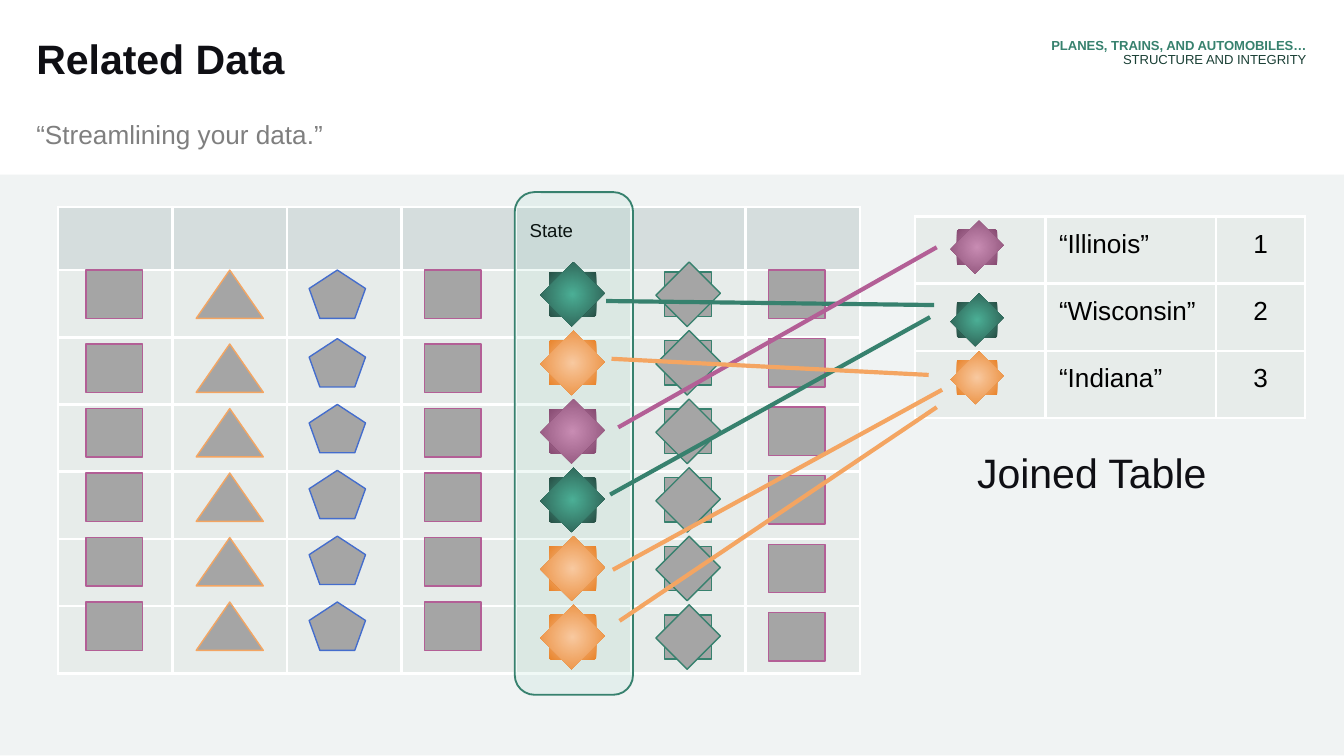
from typing import NamedTuple

from lxml.etree import SubElement
from pptx import Presentation
from pptx.dml.color import RGBColor
from pptx.enum.shapes import MSO_CONNECTOR as Conn, MSO_SHAPE as Kind
from pptx.enum.text import PP_ALIGN as Align
from pptx.oxml import parse_xml
from pptx.oxml.ns import nsdecls, qn
from pptx.util import Inches, Pt

HUES = {
    "panel": "F0F3F3", "ink": "0F0F14", "quote": "7F7F7F", "black": "000000",
    "head": "D5DDDD", "cell": "E7ECEA", "white": "FFFFFF", "gray": "A5A5A5",
    "mint": "73C5AF", "green": "37816E", "deep": "1B4036",
    "plum": "B35F96", "orange": "F4A562", "blue": "446DCD",
}
# Inner and outer colours of the state stars
GLOWS = {
    "green": ("4BAF96", "285046"),
    "orange": ("F8C9A0", "E9852D"),
    "plum": ("C88CB3", "874B72"),
}
FONT = "Arial"


class Label(NamedTuple):
    text: str
    left: float
    top: float
    width: float
    height: float
    size: int
    hue: str
    bold: bool = False
    lead: float = 0.9


class Column(NamedTuple):
    kind: Kind
    left: float
    width: float
    hue: str
    first: float
    second: float
    step: float


class Link(NamedTuple):
    x1: float
    y1: float
    x2: float
    y2: float
    hue: str


LABELS = [
    Label("Related Data", 0.27, 0.29, 7.99, 0.59, 22, "ink", True),
    Label("“Streamlining your data.”", 0.27, 0.88, 7.09, 0.47, 14, "quote", lead=1),
    Label("Joined Table", 7.27, 3.37, 1.84, 0.59, 22, "ink"),
]
COLUMNS = [
    Column(Kind.RECTANGLE, 0.64, 0.42, "plum", 2.01, 2.56, 0.48),
    Column(Kind.ISOSCELES_TRIANGLE, 1.46, 0.5, "orange", 2.01, 2.56, 0.48),
    Column(Kind.REGULAR_PENTAGON, 2.3, 0.42, "blue", 2.01, 2.52, 0.49),
    Column(Kind.RECTANGLE, 3.16, 0.42, "plum", 2.01, 2.56, 0.48),
    Column(Kind.RECTANGLE, 5.72, 0.42, "plum", 2.01, 2.52, 0.51),
]
STATES = ["green", "orange", "plum", "green", "orange", "orange"]
KEYS = [("plum", 1.84), ("green", 2.38), ("orange", 2.81)]
LINKS = [
    Link(4.51, 2.24, 6.95, 2.27, "green"),
    Link(4.54, 3.68, 6.92, 2.36, "green"),
    Link(4.6, 3.18, 6.97, 1.84, "plum"),
    Link(4.55, 2.67, 6.91, 2.79, "orange"),
    Link(4.61, 4.62, 6.97, 3.03, "orange"),
    Link(4.56, 4.24, 7.01, 2.9, "orange"),
]


def color(name: str) -> RGBColor:
    return RGBColor.from_string(HUES[name])


def style(font, size: int, hue: str, bold: bool = False) -> None:
    font.name, font.size, font.bold = FONT, Pt(size), bold
    font.color.rgb = color(hue)


def add_box(shapes, left: float, top: float, width: float, height: float, right: float = 0.1):
    frame = shapes.add_textbox(*map(Inches, (left, top, width, height))).text_frame
    frame.word_wrap = True
    frame.margin_left = frame.margin_top = 0
    frame.margin_right, frame.margin_bottom = Inches(right), Inches(0.1)
    return frame.paragraphs[0]


def add_label(shapes, label: Label) -> None:
    para = add_box(shapes, *label[1:5])
    para.text, para.line_spacing = label.text, label.lead
    style(para.font, label.size, label.hue, label.bold)


def add_mark(shapes, kind: Kind, left: float, top: float, width: float, height: float,
             fill: str, line: str = "", weight: float = 0.75):
    mark = shapes.add_shape(kind, *map(Inches, (left, top, width, height)))
    mark.shadow.inherit = False
    mark.fill.solid()
    mark.fill.fore_color.rgb = color(fill)
    if line:
        mark.line.color.rgb = color(line)
        mark.line.width = Pt(weight)
    else:
        mark.line.fill.background()
    return mark


def add_glow(mark, inner: str, outer: str) -> None:
    solid = mark._element.spPr.find(qn("a:solidFill"))
    solid.getparent().replace(solid, parse_xml(
        f'<a:gradFill {nsdecls("a")} rotWithShape="1"><a:gsLst>'
        f'<a:gs pos="0"><a:srgbClr val="{inner}"/></a:gs>'
        f'<a:gs pos="100000"><a:srgbClr val="{outer}"/></a:gs></a:gsLst>'
        '<a:path path="circle"><a:fillToRect l="50000" t="50000" r="50000" b="50000"/>'
        '</a:path></a:gradFill>'))


def add_star(shapes, x: float, y: float, wide: float, tall: float, glow: str = "") -> None:
    """Two crossed rectangles centred on x, y."""
    group = shapes.add_group_shape()
    for w, h, turn in ((wide, tall, 0), (tall, wide, 45)):
        part = add_mark(group.shapes, Kind.RECTANGLE, x - w / 2, y - h / 2, w, h,
                        "gray", "" if glow else "green")
        part.rotation = turn
        if glow:
            add_glow(part, *GLOWS[glow])


def add_grid(shapes, left: float, top: float, widths: list[float], heights: list[float]):
    grid = shapes.add_table(len(heights), len(widths), *map(
        Inches, (left, top, sum(widths), sum(heights)))).table
    grid.first_row = grid.horz_banding = False
    for col, width in zip(grid.columns, widths):
        col.width = Inches(width)
    for row, height in zip(grid.rows, heights):
        row.height = Inches(height)
    for cell in grid.iter_cells():
        props = cell._tc.get_or_add_tcPr()
        for side in ("lnL", "lnR", "lnT", "lnB"):
            edge = SubElement(props, qn(f"a:{side}"), w=str(Pt(1.5)))
            SubElement(SubElement(edge, qn("a:solidFill")), qn("a:srgbClr"), val=HUES["white"])
        cell.fill.solid()
        cell.fill.fore_color.rgb = color("cell")
    return grid


def set_cell(cell, text: str, size: int, align: Align = Align.LEFT) -> None:
    cell.margin_left = cell.margin_right = cell.margin_top = cell.margin_bottom = Inches(0.1)
    para = cell.text_frame.paragraphs[0]
    para.text, para.alignment = text, align
    style(para.font, size, "black")


def add_link(shapes, link: Link) -> None:
    line = shapes.add_connector(Conn.STRAIGHT, *map(Inches, link[:4]))
    line.line.color.rgb = color(link.hue)
    line.line.width = Pt(2.25)
    SubElement(line._element.spPr, qn("a:effectLst"))


def main() -> None:
    # A 16:9 slide
    deck = Presentation()
    deck.slide_width = Inches(10)
    deck.slide_height = Inches(10 * 9 / 16)
    shapes = deck.slides.add_slide(deck.slide_layouts[6]).shapes

    # Panel and headings
    add_mark(shapes, Kind.RECTANGLE, 0, 1.3, 10, 4.32, "panel")
    for label in LABELS:
        add_label(shapes, label)
    para = add_box(shapes, 6.65, 0.29, 3.07, 0.36, right=0)
    para.alignment, para.line_spacing = Align.RIGHT, 0.9
    run = para.add_run()
    run.text = "PLANES, TRAINS, AND AUTOMOBILES…"
    style(run.font, 7, "green", True)
    para.add_line_break()
    run = para.add_run()
    run.text = "STRUCTURE AND INTEGRITY"
    style(run.font, 7, "deep")

    # Main table with its state column lit up
    main_grid = add_grid(shapes, 0.43, 1.54, [5.97 / 7] * 7, [0.47] + [0.5] * 6)
    for cell in main_grid.rows[0].cells:
        cell.fill.fore_color.rgb = color("head")
    set_cell(main_grid.cell(0, 4), "State", 10)
    frame = add_mark(shapes, Kind.ROUNDED_RECTANGLE, 2.4, 2.86, 3.74, 0.88, "mint", "green", 1)
    frame.rotation = 90
    tint = frame._element.spPr.find(qn("a:solidFill"))[0]
    SubElement(tint, qn("a:alpha"), val="10000")

    # Marks in the main table
    for col in COLUMNS:
        tops = [col.first] + [col.second + col.step * i for i in range(5)]
        for top in tops:
            add_mark(shapes, col.kind, col.left, top, col.width, 0.36, "gray", col.hue)
    for i, state in enumerate(STATES):
        y = 2.19 + 0.51 * i
        add_star(shapes, 4.26, y, 0.35, 0.33, state)
        add_star(shapes, 5.12, y, 0.35, 0.33)

    # Joined table and its keys
    key_grid = add_grid(shapes, 6.81, 1.61, [0.97, 1.27, 0.66], [0.5] * 3)
    for i, name in enumerate(("“Illinois”", "“Wisconsin”", "“Indiana”")):
        set_cell(key_grid.cell(i, 1), name, 14)
        set_cell(key_grid.cell(i, 2), str(i + 1), 14, Align.CENTER)
    for glow, y in KEYS:
        add_star(shapes, 7.27, y, 0.3, 0.26, glow)

    # Links from states to keys
    for link in LINKS:
        add_link(shapes, link)

    deck.save("out.pptx")


if __name__ == "__main__":
    main()
